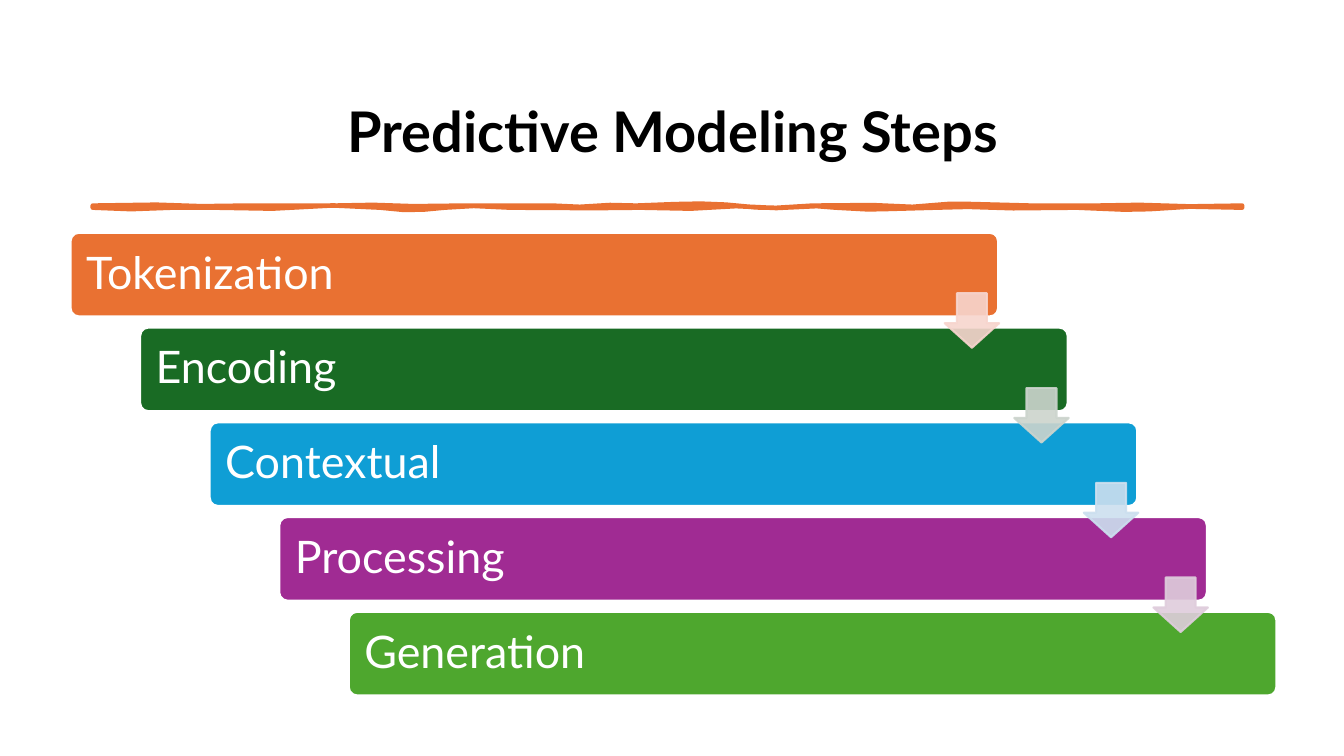
from dataclasses import dataclass
import lxml.etree
import pptx
import pptx.dml.color
import pptx.enum.shapes
import pptx.enum.text
import pptx.oxml.ns
import pptx.util

PX = 9144
FONT = "Lato"
ORANGE = "E97132"
STEP_RIGHT, STEP_DOWN = 69, 94
SHAPES = pptx.enum.shapes.MSO_SHAPE
RIBBON_TOP = [
    (920, 2040), (1550, 2031), (2000, 2046), (2440, 2040), (3310, 2040),
    (3700, 2033), (4100, 2046), (4600, 2040), (5480, 2040), (5750, 2052),
    (6050, 2034), (6310, 2040), (6700, 2025), (6950, 2020), (7200, 2030),
    (7500, 2058), (7700, 2062), (8060, 2040), (8650, 2035), (9050, 2052),
    (9400, 2024), (9550, 2022), (10230, 2040), (10870, 2040), (11300, 2033),
    (11800, 2048), (12320, 2040),
]
RIBBON_BOTTOM = [
    (12320, 2060), (11800, 2050), (11400, 2075), (11150, 2080), (10680, 2060),
    (10050, 2066), (9600, 2052), (9280, 2060), (8750, 2075), (8600, 2077),
    (8290, 2060), (8100, 2045), (7700, 2064), (7300, 2045), (6850, 2070),
    (6350, 2060), (5900, 2065), (5060, 2060), (4700, 2043), (4410, 2060),
    (4200, 2080), (4000, 2082), (3770, 2060), (3300, 2038), (2890, 2060),
    (2700, 2070), (2130, 2060), (1710, 2060), (1300, 2075), (920, 2060),
]


@dataclass
class Step:
    label: str
    color: str
    arrow_color: str | None


STEPS = [
    Step("Tokenization", ORANGE, "F7D5CE"),
    Step("Encoding", "196B24", "CCD4CD"),
    Step("Contextual", "0F9ED5", "CCDFEF"),
    Step("Processing", "A02B93", "DFCDDC"),
    Step("Generation", "4EA72E", None),
]


def px(length: int) -> pptx.util.Emu:
    return pptx.util.Emu(length * PX)


def rgb(color: str) -> pptx.dml.color.RGBColor:
    return pptx.dml.color.RGBColor.from_string(color)


def paint(shape, fill: str, line: str, width: float) -> None:
    shape.shadow.inherit = False
    shape.fill.solid()
    shape.fill.fore_color.rgb = rgb(fill)
    shape.line.color.rgb = rgb(line)
    shape.line.width = pptx.util.Pt(width)


def set_opacity(shape, percent: int) -> None:
    qn = pptx.oxml.ns.qn
    for color in shape._element.spPr.iter(qn("a:srgbClr")):
        alpha = lxml.etree.SubElement(color, qn("a:alpha"))
        alpha.set("val", str(percent * 1000))


def write(shape, text: str, size: int, color: str, bold: bool):
    frame = shape.text_frame
    frame.word_wrap = True
    frame.vertical_anchor = pptx.enum.text.MSO_ANCHOR.MIDDLE
    frame.text = text
    para = frame.paragraphs[0]
    font = para.runs[0].font
    font.name, font.size, font.bold = FONT, pptx.util.Pt(size), bold
    font.color.rgb = rgb(color)
    return para


def add_title(page) -> None:
    box = page.shapes.add_textbox(px(92), px(40), px(1150), px(145))
    para = write(box, "Predictive Modeling Steps", 40, "000000", True)
    para.alignment = pptx.enum.text.PP_ALIGN.CENTER
    para.line_spacing = 1.5
    para.space_before = pptx.util.Pt(8)
    para.space_after = pptx.util.Pt(4)


def add_ribbon(page) -> None:
    start, *points = RIBBON_TOP + RIBBON_BOTTOM
    builder = page.shapes.build_freeform(*start, scale=PX / 10)
    builder.add_line_segments(points, close=True)
    paint(builder.convert_to_shape(), ORANGE, ORANGE, 3.25)


def add_step(page, index: int, step: Step) -> None:
    bar = page.shapes.add_shape(
        SHAPES.ROUNDED_RECTANGLE,
        px(70 + index * STEP_RIGHT), px(231 + index * STEP_DOWN), px(920), px(83),
    )
    bar.adjustments[0] = 0.1
    paint(bar, step.color, "FFFFFF", 1.5)
    frame = bar.text_frame
    frame.margin_left = frame.margin_right = px(13)
    frame.margin_top = frame.margin_bottom = px(13)
    para = write(bar, step.label, 32, "FFFFFF", False)
    para.alignment = pptx.enum.text.PP_ALIGN.LEFT
    para.line_spacing = 0.9


def add_arrow(page, index: int, color: str) -> None:
    arrow = page.shapes.add_shape(
        SHAPES.DOWN_ARROW,
        px(937 + index * STEP_RIGHT), px(291 + index * STEP_DOWN), px(54), px(54),
    )
    arrow.adjustments[0] = 0.55
    arrow.adjustments[1] = 0.45
    paint(arrow, color, color, 1.5)
    set_opacity(arrow, 90)


def main() -> None:
    deck = pptx.Presentation()
    deck.slide_width, deck.slide_height = px(1333), px(750)
    page = deck.slides.add_slide(deck.slide_layouts[6])
    add_title(page)
    add_ribbon(page)
    for index, step in enumerate(STEPS):
        add_step(page, index, step)
    for index, step in enumerate(STEPS):
        if step.arrow_color:
            add_arrow(page, index, step.arrow_color)
    deck.save("out.pptx")


if __name__ == "__main__":
    main()
